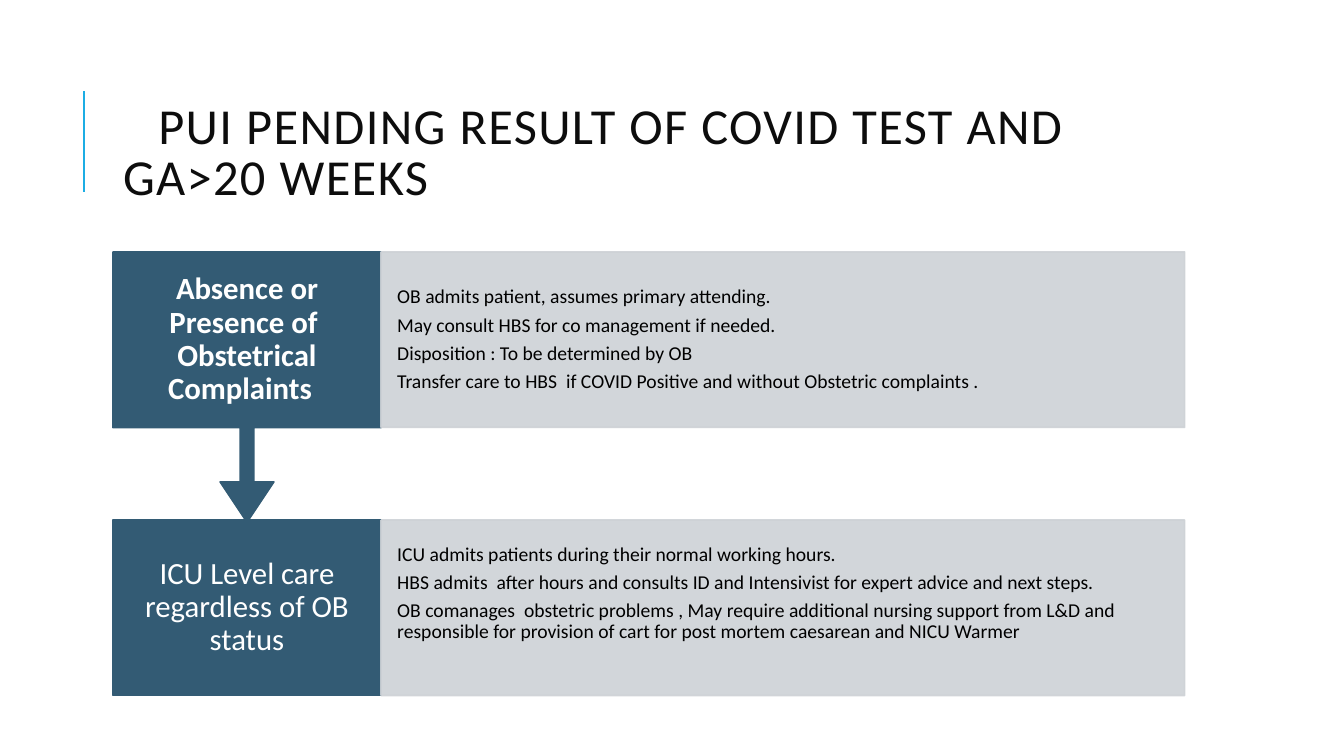
from pptx import Presentation
from pptx.dml.color import RGBColor
from pptx.enum.shapes import MSO_CONNECTOR, MSO_SHAPE
from pptx.enum.text import MSO_ANCHOR, MSO_AUTO_SIZE, PP_ALIGN
from pptx.oxml.ns import qn
from pptx.util import Inches, Pt
from lxml import etree

RECTANGLE = MSO_SHAPE.RECTANGLE
ARROW_CALLOUT = MSO_SHAPE.DOWN_ARROW_CALLOUT
STRAIGHT = MSO_CONNECTOR.STRAIGHT
MIDDLE = MSO_ANCHOR.MIDDLE
NO_AUTOFIT = MSO_AUTO_SIZE.NONE
LEFT, CENTER = PP_ALIGN.LEFT, PP_ALIGN.CENTER

FONT = "Calibri"
COLORS = {"accent": "1CADE4", "title": "0D0D0D", "header": "335B74",
          "panel": "CED2D6", "light": "FFFFFF", "dark": "000000"}

ROW_LEFT, ROW_WIDTH, ROW_HEIGHT = 1.12, 10.63, 1.74
HEADER_WIDTH = 2.66
CALLOUT_HEIGHT = 2.68
ADMIT_TOP, ICU_TOP = 2.5, 5.16

TITLE = "PUI PENDING RESULT OF COVID TEST AND GA>20 WEEKS"
ADMIT_HEADER = "Absence or Presence of  Obstetrical Complaints  "
ADMIT_STEPS = [
    "OB admits patient, assumes primary attending.",
    "May consult HBS for co management if needed.",
    "Disposition : To be determined by OB",
    "Transfer care to HBS  if COVID Positive and without Obstetric complaints .",
]
ICU_HEADER = "ICU Level care regardless of OB status"
ICU_STEPS = [
    "ICU admits patients during their normal working hours.",
    "HBS admits  after hours and consults ID and Intensivist for expert advice "
    "and next steps.",
    "OB comanages  obstetric problems , May require additional nursing support "
    "from L&D and responsible for provision of cart for post mortem caesarean "
    "and NICU Warmer",
]


def color(name):
    return RGBColor.from_string(COLORS[name])


def set_insets(frame, left, top, right, bottom):
    frame.margin_left, frame.margin_top = Inches(left), Inches(top)
    frame.margin_right, frame.margin_bottom = Inches(right), Inches(bottom)


def write(frame, lines, size, ink, align, spacing, after=0, bold=False):
    frame.word_wrap = True
    frame.auto_size = NO_AUTOFIT
    frame.vertical_anchor = MIDDLE
    frame.text = "\n".join(lines)
    for para in frame.paragraphs:
        para.alignment = align
        para.line_spacing = spacing
        para.space_before, para.space_after = Pt(0), Pt(after)
        for span in para.runs:
            span.font.name, span.font.size = FONT, Pt(size)
            span.font.bold = bold
            span.font.color.rgb = color(ink)


def add_block(page, kind, left, top, width, height, paint):
    block = page.shapes.add_shape(kind, Inches(left), Inches(top),
                                  Inches(width), Inches(height))
    block.shadow.inherit = False
    block.fill.solid()
    block.fill.fore_color.rgb = color(paint)
    block.line.color.rgb = color(paint)
    block.line.width = Pt(1.25)
    return block


def make_translucent(block, percent):
    for tint in block._element.spPr.iter(qn("a:srgbClr")):
        etree.SubElement(tint, qn("a:alpha"), val=str(percent * 1000))


def add_title(page, left, top, width, height):
    title = page.shapes.title
    title.left, title.top = Inches(left), Inches(top)
    title.width, title.height = Inches(width), Inches(height)
    frame = title.text_frame
    set_insets(frame, 0.1, 0.2, 0.1, 0.05)
    write(frame, [TITLE], 36, "title", LEFT, 0.85)
    para = frame.paragraphs[0]
    para._p.get_or_add_pPr().set("indent", str(Inches(0.35)))
    para.runs[0]._r.get_or_add_rPr().set("spc", "100")


def add_title_rule(page, x, top, bottom):
    rule = page.shapes.add_connector(STRAIGHT, Inches(x), Inches(bottom),
                                     Inches(x), Inches(top))
    rule.line.color.rgb = color("accent")
    rule.line.width = Pt(1.5)
    etree.SubElement(rule._element.spPr, qn("a:effectLst"))


def add_header(page, text, left, top, leads_on):
    """Dark label; with leads_on it carries the arrow to the row below."""
    kind, height = RECTANGLE, ROW_HEIGHT
    if leads_on:
        kind, height = ARROW_CALLOUT, CALLOUT_HEIGHT
    header = add_block(page, kind, left, top, HEADER_WIDTH, height, "header")
    if leads_on:
        for index, value in enumerate((0.05, 0.1, 0.15, 0.65)):
            header.adjustments[index] = value
    set_insets(header.text_frame, 0.19, 0.17, 0.19, 0.17)
    write(header.text_frame, [text], 22, "light", CENTER, 0.9, bold=leads_on)


def add_row(page, top, header, steps, leads_on=False, lift=0):
    """Header and step panel; lift raises the steps above the middle."""
    add_header(page, header, ROW_LEFT, top, leads_on)
    panel = add_block(page, RECTANGLE, ROW_LEFT + HEADER_WIDTH, top,
                      ROW_WIDTH - HEADER_WIDTH, ROW_HEIGHT, "panel")
    make_translucent(panel, 90)
    set_insets(panel.text_frame, 0.16, 0.19, 0.16, 0.19 + lift)
    write(panel.text_frame, steps, 14, "dark", LEFT, 0.9, after=4.9)


def main():
    deck = Presentation()
    deck.slide_width, deck.slide_height = Inches(13.33), Inches(7.5)
    page = deck.slides.add_slide(deck.slide_layouts.get_by_name("Title Only"))
    add_title_rule(page, 0.83, 0.9, 1.9)
    add_title(page, ROW_LEFT, 0.64, ROW_WIDTH, 1.64)
    add_row(page, ICU_TOP, ICU_HEADER, ICU_STEPS, lift=0.28)
    add_row(page, ADMIT_TOP, ADMIT_HEADER, ADMIT_STEPS, leads_on=True)
    deck.save("out.pptx")


if __name__ == "__main__":
    main()
